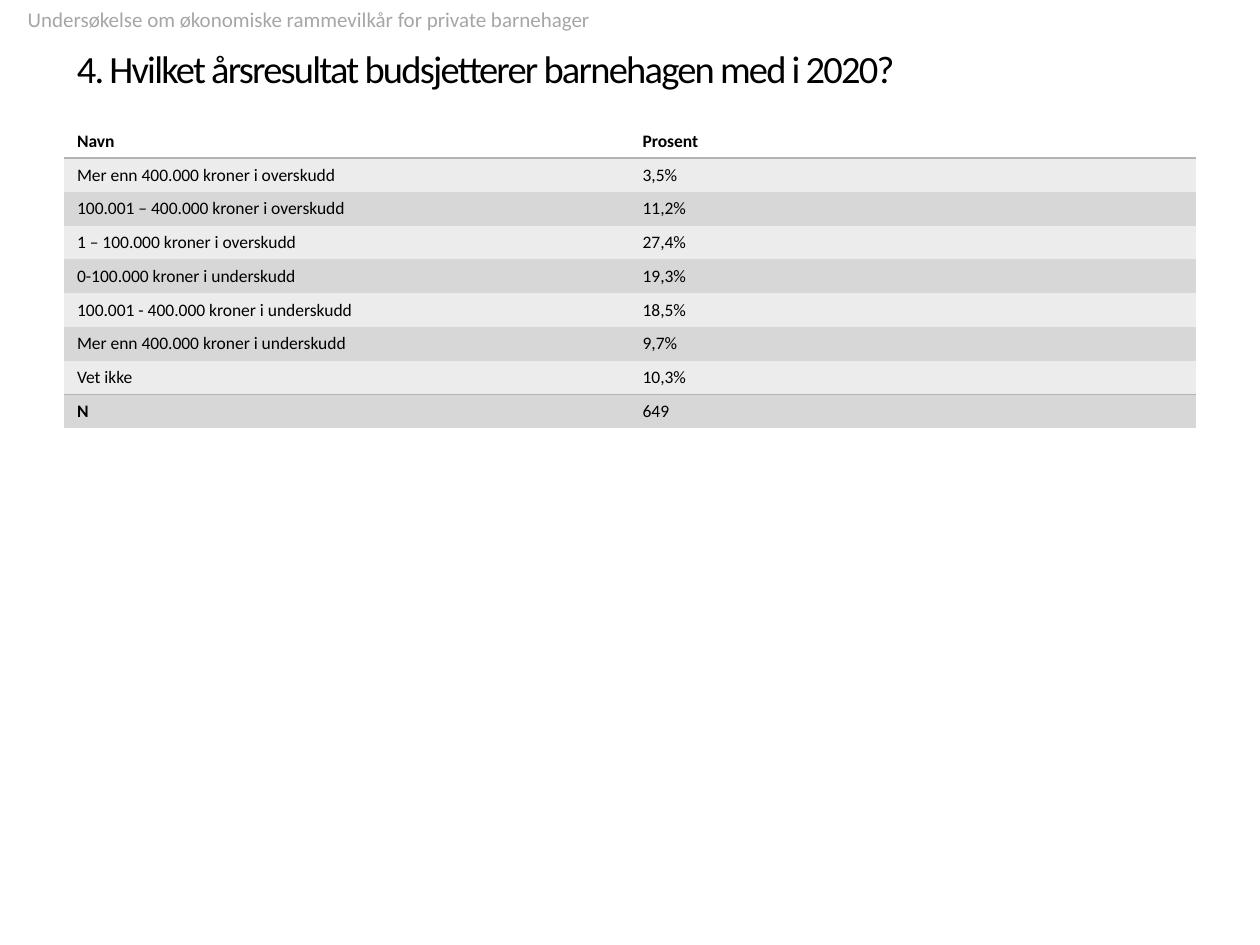
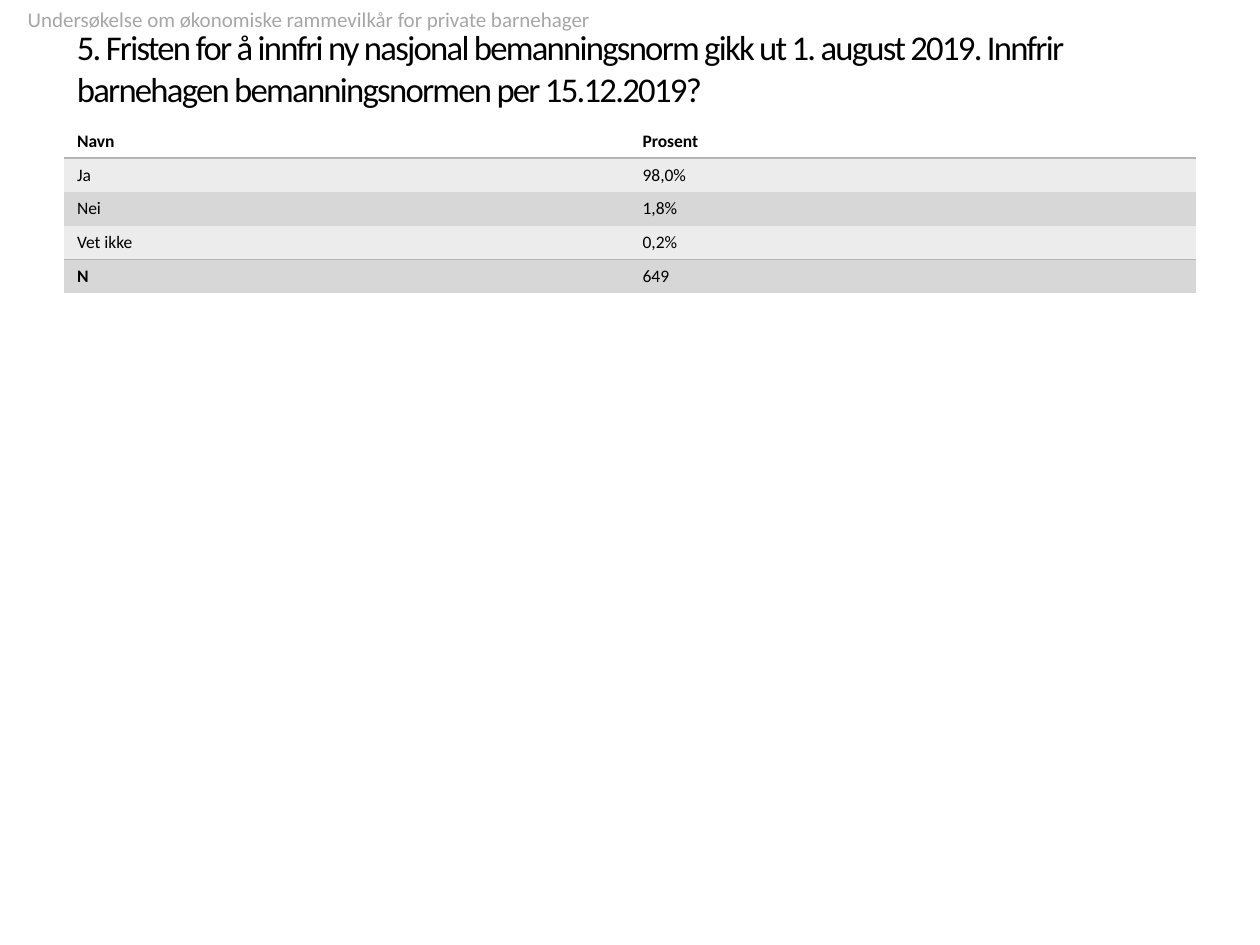
from lxml.etree import SubElement as Sub
from pptx import Presentation
from pptx.dml.color import RGBColor
from pptx.enum.text import MSO_ANCHOR as Anchor
from pptx.oxml.ns import qn
from pptx.util import Cm, Pt

FONT = "Calibri"
BLACK, GREY, RULE = "000000", "A6A6A6", "B4B4B4"
WHITE, LIGHT, DARK = "FFFFFF", "ECECEC", "D7D7D8"
SURVEY = "Undersøkelse om økonomiske rammevilkår for private barnehager"
BAND = (0, 0, 25.4, 0.64)
TITLE = (1.3, 0.61, 22.86, 1.52)
GRID = (1.3, 2.51, 22.8, 0.68)  # left, top, width, row height

PAGES = [
    ("4. Hvilket årsresultat budsjetterer barnehagen med i 2020?", 22, [
        ("Mer enn 400.000 kroner i overskudd", "3,5%"),
        ("100.001 – 400.000 kroner i overskudd", "11,2%"),
        ("1 – 100.000 kroner i overskudd", "27,4%"),
        ("0-100.000 kroner i underskudd", "19,3%"),
        ("100.001 - 400.000 kroner i underskudd", "18,5%"),
        ("Mer enn 400.000 kroner i underskudd", "9,7%"),
        ("Vet ikke", "10,3%"),
        ("N", "649"),
    ]),
    ("5. Fristen for å innfri ny nasjonal bemanningsnorm gikk ut 1. august 2019. "
     "Innfrir barnehagen bemanningsnormen per 15.12.2019?", 19.8, [
        ("Ja", "98,0%"),
        ("Nei", "1,8%"),
        ("Vet ikke", "0,2%"),
        ("N", "649"),
    ]),
]


def tint(code):
    return RGBColor.from_string(code)


def write(frame, text, size=10, color=BLACK, bold=False, track=0):
    """Put text in a frame; track is the letter spacing in points."""
    run = frame.paragraphs[0].add_run()
    run.text = text
    font = run.font
    font.name, font.size, font.bold = FONT, Pt(size), bold
    font.color.rgb = tint(color)
    if track:
        run._r.get_or_add_rPr().set("spc", str(round(track * 100)))


def add_text(slide, box, text, anchor=Anchor.TOP, inset=0.25, **style):
    frame = slide.shapes.add_textbox(*map(Cm, box)).text_frame
    frame.word_wrap = True
    frame.vertical_anchor = anchor
    frame.margin_left = Cm(inset)
    write(frame, text, **style)


def set_edges(cell, ruled):
    """Draw a rule on the named sides and clear the others."""
    props = cell._tc.get_or_add_tcPr()
    for side in "LRTB":
        line = Sub(props, qn(f"a:ln{side}"), w=str(Pt(1)))
        if side in ruled:
            fill = Sub(line, qn("a:solidFill"))
            Sub(fill, qn("a:srgbClr"), val=RULE)
        else:
            Sub(line, qn("a:noFill"))


def add_grid(slide, box, answers):
    left, top, width, pitch = box
    rows = [("Navn", "Prosent"), *answers]
    last = len(rows) - 1
    table = slide.shapes.add_table(
        len(rows), 2, Cm(left), Cm(top), Cm(width), Cm(pitch * len(rows))).table
    for i, row in enumerate(rows):
        table.rows[i].height = Cm(pitch)
        ruled = ("T" if i in (1, last) else "") + ("B" if i in (0, last - 1) else "")
        shade = WHITE if i == 0 else LIGHT if i % 2 else DARK
        for j, text in enumerate(row):
            cell = table.cell(i, j)
            set_edges(cell, ruled)
            cell.fill.solid()
            cell.fill.fore_color.rgb = tint(shade)
            write(cell.text_frame, text, bold=i == 0 or (i == last and j == 0))


def add_page(deck, title, size, answers):
    slide = deck.slides.add_slide(deck.slide_layouts[6])
    add_text(slide, TITLE, title, anchor=Anchor.MIDDLE, size=size, track=-1)
    add_text(slide, BAND, SURVEY, inset=0.56, size=12, color=GREY)
    add_grid(slide, GRID, answers)


def main():
    deck = Presentation()
    deck.slide_width, deck.slide_height = Cm(25.4), Cm(19.05)
    for page in PAGES:
        add_page(deck, *page)
    deck.save("out.pptx")


if __name__ == "__main__":
    main()
